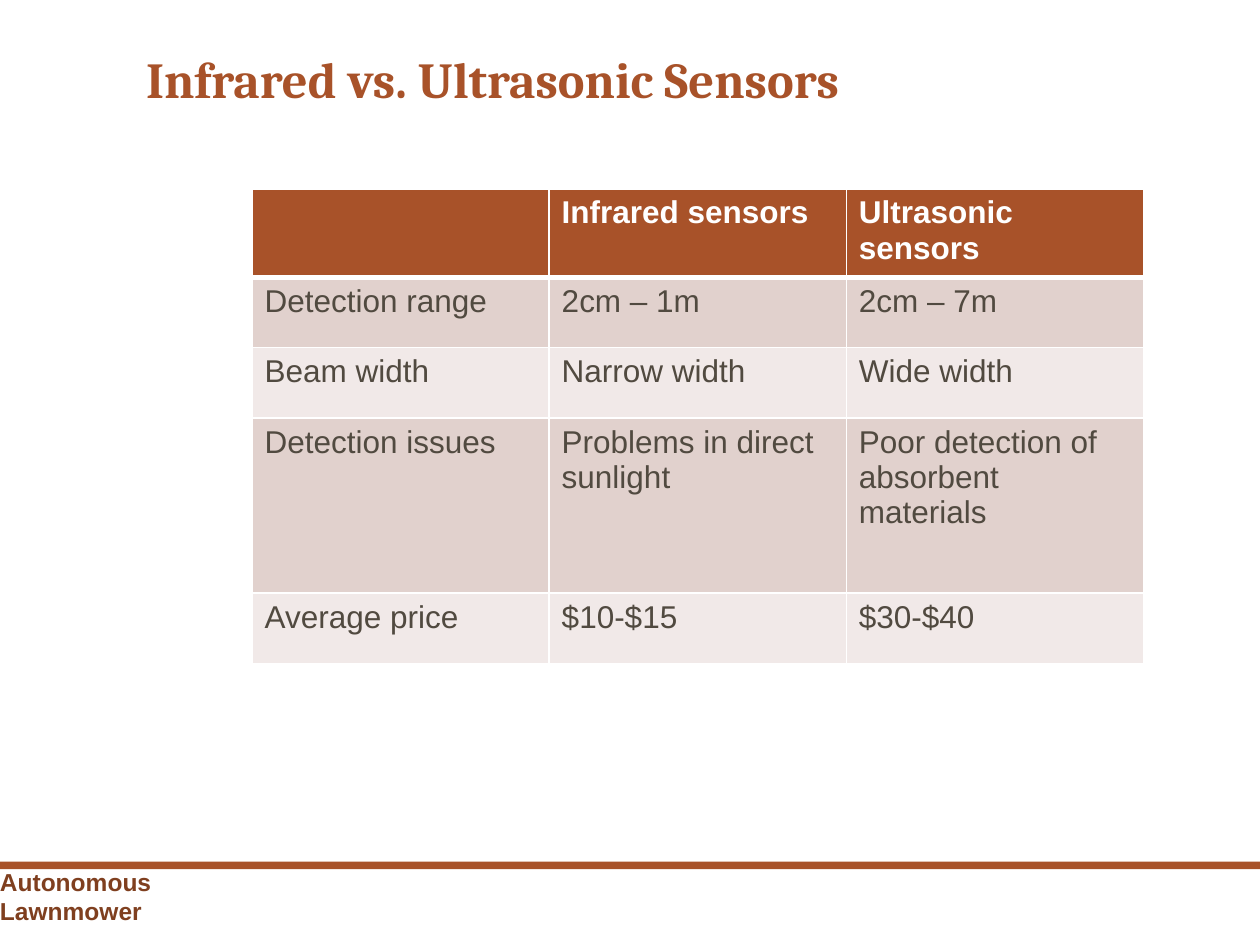
"""Build the slide comparing infrared and ultrasonic sensors."""
from lxml import etree
from pptx import Presentation, util as u
from pptx.dml.color import RGBColor
from pptx.enum import shapes, text
from pptx.oxml import ns

COLORS = {
    "rust": "A85229",
    "brown": "7F3F1F",
    "ink": "514A40",
    "white": "FFFFFF",
    "dark_band": "E1D1CD",
    "light_band": "F1E9E8",
}
ROWS = [
    ("", "Infrared sensors", "Ultrasonic sensors"),
    ("Detection range", "2cm – 1m", "2cm – 7m"),
    ("Beam width", "Narrow width", "Wide width"),
    ("Detection issues", "Problems in direct sunlight", "Poor detection of absorbent materials"),
    ("Average price", "$10-$15", "$30-$40"),
]
ROW_HEIGHTS = [1.73, 1.42, 1.42, 3.53, 1.42]
COLUMN_WIDTH = 5.99


def add_span(para, words, size, color, bold=True, face="Arial"):
    span = para.add_run()
    span.text = words
    span.font.name = face
    span.font.size = u.Pt(size)
    span.font.bold = bold
    span.font.color.rgb = RGBColor.from_string(COLORS[color])


def add_border(cell, side, points):
    line = etree.SubElement(cell._tc.get_or_add_tcPr(), ns.qn(f"a:ln{side}"), w=str(u.Pt(points)))
    fill = etree.SubElement(line, ns.qn("a:solidFill"))
    etree.SubElement(fill, ns.qn("a:srgbClr"), val=COLORS["white"])


deck = Presentation()
deck.slide_width, deck.slide_height = u.Cm(25.4), u.Cm(19.05)
page = deck.slides.add_slide(deck.slide_layouts[5])

bar = page.shapes.add_shape(
    shapes.MSO_SHAPE.RECTANGLE, 0, u.Cm(17.37), deck.slide_width, u.Cm(0.15)
)
bar.shadow.inherit = False
bar.fill.solid()
bar.fill.fore_color.rgb = RGBColor.from_string(COLORS["rust"])
bar.line.fill.background()

footer = page.shapes.add_textbox(u.Cm(-0.25), u.Cm(17.35), u.Cm(6.53), u.Cm(0.84))
footer.text_frame.word_wrap = True
footer.text_frame.margin_right = u.Cm(2.5)
add_span(footer.text_frame.paragraphs[0], "Autonomous Lawnmower", 14, "brown")

title = page.shapes.title
title.left, title.top, title.width, title.height = u.Cm(2.69), u.Cm(1.07), u.Cm(21), u.Cm(1.27)
title.text_frame.vertical_anchor = text.MSO_ANCHOR.BOTTOM
title.text_frame.auto_size = text.MSO_AUTO_SIZE.NONE
para = title.text_frame.paragraphs[0]
para.alignment = text.PP_ALIGN.LEFT
para.line_spacing = 0.9
add_span(para, "Infrared vs. Ultrasonic Sensors", 28.8, "rust", face="Cambria")

table = page.shapes.add_table(
    len(ROWS), len(ROWS[0]), u.Cm(5.08), u.Cm(3.81),
    u.Cm(COLUMN_WIDTH * len(ROWS[0])), u.Cm(sum(ROW_HEIGHTS)),
).table
for column in table.columns:
    column.width = u.Cm(COLUMN_WIDTH)

for row_number, (labels, height) in enumerate(zip(ROWS, ROW_HEIGHTS)):
    table.rows[row_number].height = u.Cm(height)
    header = row_number == 0
    band = "rust" if header else "dark_band" if row_number % 2 else "light_band"
    for column_number, label in enumerate(labels):
        cell = table.cell(row_number, column_number)
        for side in "LRTB":
            thick = (header and side == "B") or (row_number == 1 and side == "T")
            add_border(cell, side, 3 if thick else 1)
        cell.fill.solid()
        cell.fill.fore_color.rgb = RGBColor.from_string(COLORS[band])
        if label:
            add_span(cell.text_frame.paragraphs[0], label, 18, "white" if header else "ink", header)

deck.save("out.pptx")
